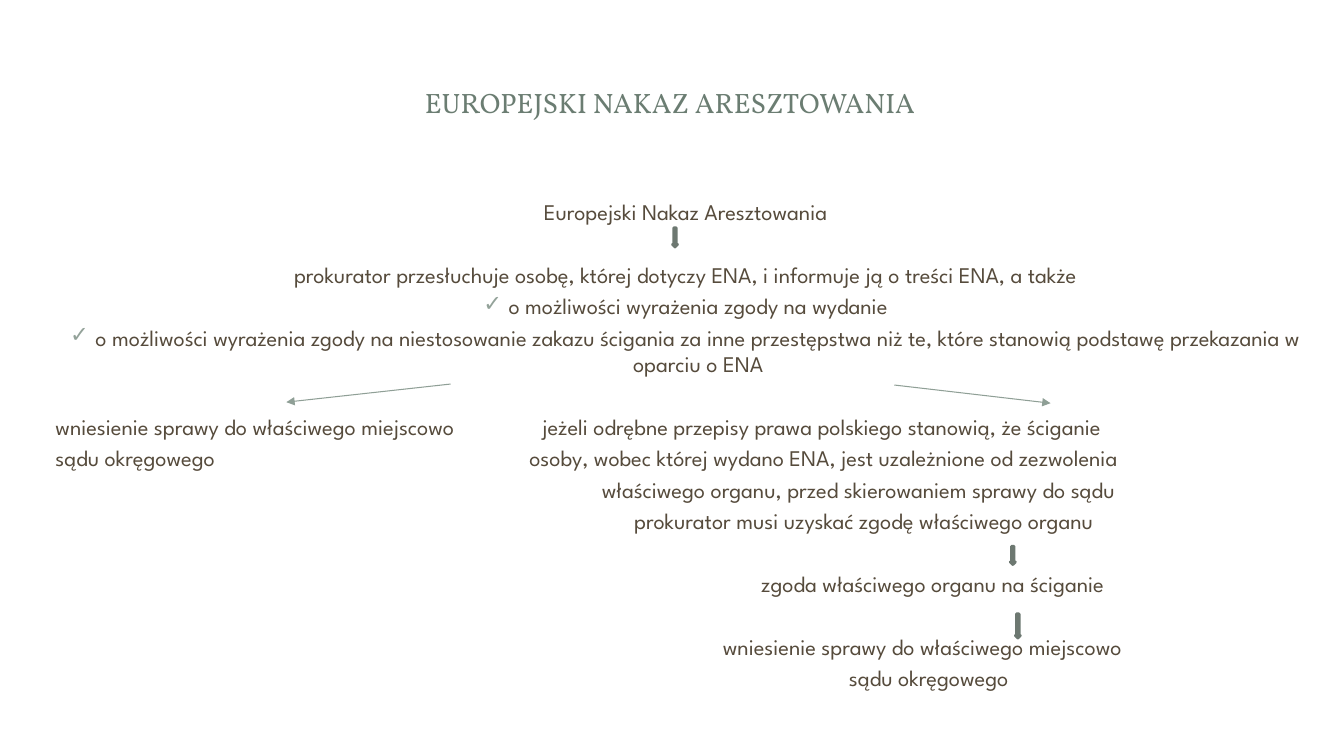
from lxml.etree import SubElement
from pptx import Presentation
from pptx.dml.color import RGBColor
from pptx.enum.shapes import MSO_CONNECTOR, MSO_SHAPE
from pptx.enum.text import MSO_ANCHOR, PP_ALIGN
from pptx.oxml.ns import qn
from pptx.util import Pt

PX = 9144  # 100 px to the inch
COLORS = {"title": "6B7D72", "text": "564B3C", "check": "93A299",
          "arrow": "93A299", "outline": "6D7871", "branch": "8F9F96"}
TITLE_FONT = "Vollkorn"
TEXT_FONT = "League Spartan"
BULLET_HANG = 25


def px(*lengths):
    return [round(length * PX) for length in lengths]


def color(name):
    return RGBColor.from_string(COLORS[name])


def format_paragraph(para, font, size, color_name, align):
    para.alignment = align
    for span in para.runs:
        span.font.name = font
        span.font.size = Pt(size)
        span.font.color.rgb = color(color_name)


def clear_insets(frame):
    frame.margin_left = frame.margin_right = 0
    frame.margin_top = frame.margin_bottom = 0


def add_title(page, text):
    title = page.shapes.title
    title.left, title.top, title.width, title.height = px(62, 44, 1205, 114)
    frame = title.text_frame
    frame.text = text
    frame.vertical_anchor = MSO_ANCHOR.MIDDLE
    format_paragraph(frame.paragraphs[0], TITLE_FONT, 20, "title", PP_ALIGN.CENTER)


def add_check_bullet(para):
    properties = para._p.get_or_add_pPr()
    indent, hang = px(BULLET_HANG, -BULLET_HANG)
    properties.set("marL", str(indent))
    properties.set("indent", str(hang))
    bullet_color = SubElement(properties, qn("a:buClr"))
    SubElement(bullet_color, qn("a:srgbClr"), val=COLORS["check"])
    SubElement(properties, qn("a:buFont"), typeface=TEXT_FONT)
    SubElement(properties, qn("a:buChar"), char="✓")


def add_step(page, place, lines, align=PP_ALIGN.LEFT, indents=(), bullets=False):
    """Add one step of the procedure; indents shift single lines to the right."""
    box = page.shapes.add_textbox(*px(*place))
    frame = box.text_frame
    frame.word_wrap = True
    clear_insets(frame)
    frame.text = "\n".join(lines)
    for para in frame.paragraphs:
        format_paragraph(para, TEXT_FONT, 16, "text", align)
        para.space_after = Pt(3.2)
        if bullets:
            add_check_bullet(para)
    for para, indent in zip(frame.paragraphs, indents):
        para._p.get_or_add_pPr().set("marL", str(indent * PX))


def add_down_arrow(page, left, top, height):
    arrow = page.shapes.add_shape(MSO_SHAPE.DOWN_ARROW, *px(left, top, 5, height))
    arrow.shadow.inherit = False
    arrow.fill.solid()
    arrow.fill.fore_color.rgb = color("arrow")
    arrow.line.color.rgb = color("outline")
    arrow.line.width = Pt(2)


def add_branch(page, ends):
    branch = page.shapes.add_connector(MSO_CONNECTOR.STRAIGHT, *px(*ends))
    branch.line.color.rgb = color("branch")
    branch.line.width = Pt(0.75)
    SubElement(branch.line._get_or_add_ln(), qn("a:tailEnd"), type="triangle")
    SubElement(branch._element.spPr, qn("a:effectLst"))


def main():
    deck = Presentation()
    deck.slide_width, deck.slide_height = px(1333, 750)
    page = deck.slides.add_slide(deck.slide_layouts[5])
    add_title(page, "EUROPEJSKI NAKAZ ARESZTOWANIA")

    center = PP_ALIGN.CENTER
    referral = ["wniesienie sprawy do właściwego miejscowo", "sądu okręgowego"]
    add_step(page, (55, 197, 1250, 26), ["Europejski Nakaz Aresztowania"], center)
    add_step(page, (55, 259, 1250, 26), [
        "prokurator przesłuchuje osobę, której dotyczy ENA, "
        "i informuje ją o treści ENA, a także"], center)
    add_step(page, (55, 290, 1250, 88), [
        "o możliwości wyrażenia zgody na wydanie",
        "o możliwości wyrażenia zgody na niestosowanie zakazu ścigania za inne "
        "przestępstwa niż te, które stanowią podstawę przekazania w oparciu o ENA",
    ], center, bullets=True)
    add_step(page, (55, 410, 450, 57), referral)
    add_step(page, (525, 410, 650, 120), [
        "jeżeli odrębne przepisy prawa polskiego stanowią, że ściganie",
        "osoby, wobec której wydano ENA, jest uzależnione od zezwolenia",
        "właściwego organu, przed skierowaniem sprawy do sądu",
        "prokurator musi uzyskać zgodę właściwego organu",
    ], indents=(13, 0, 72, 104))
    add_step(page, (755, 566, 400, 26), ["zgoda właściwego organu na ściganie"])
    add_step(page, (717, 628, 450, 57), referral, indents=(0, 125))

    for left, top, height in ((667, 226, 19), (1002, 542, 18), (1007, 609, 24)):
        add_down_arrow(page, left, top, height)
    for ends in ((447, 381, 284, 399), (887, 382, 1042, 400)):
        add_branch(page, ends)
    deck.save("out.pptx")


if __name__ == "__main__":
    main()
